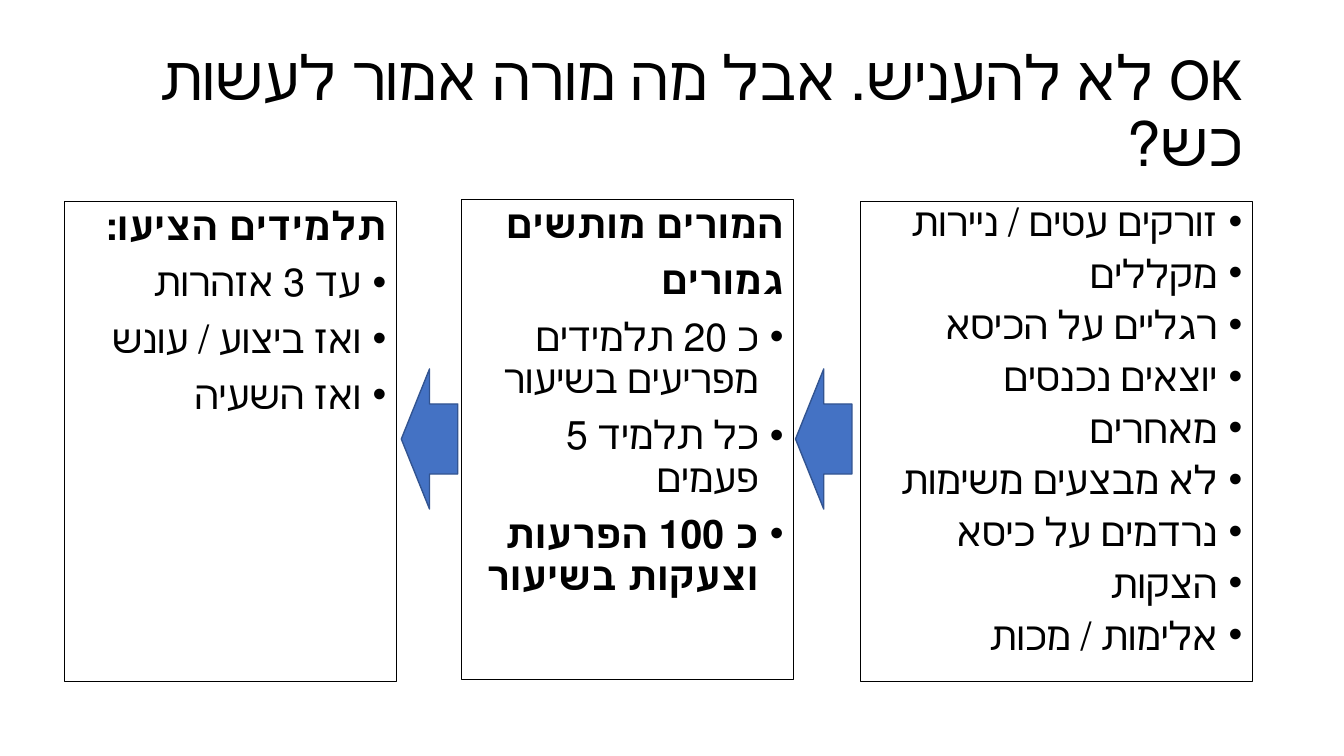
from lxml import etree
from pptx import Presentation
from pptx.dml.color import RGBColor
from pptx.enum.shapes import MSO_SHAPE
from pptx.enum.text import MSO_ANCHOR, PP_ALIGN
from pptx.oxml.ns import qn
from pptx.util import Inches, Pt

BLACK = RGBColor(0x00, 0x00, 0x00)
BLUE = RGBColor(0x44, 0x72, 0xC4)
DARK_BLUE = RGBColor(0x32, 0x54, 0x91)
FONT = "Calibri"
RIGHT = PP_ALIGN.RIGHT
TOP, MIDDLE = MSO_ANCHOR.TOP, MSO_ANCHOR.MIDDLE
RIGHT_ARROW = MSO_SHAPE.RIGHT_ARROW

# Content: each line is (text, bulleted, bold)
TITLE = "OK לא להעניש. אבל מה מורה אמור לעשות כש?"
DISRUPTIONS = [(text, True, False) for text in (
    "זורקים עטים / ניירות", "מקללים", "רגליים על הכיסא",
    "יוצאים נכנסים", "מאחרים", "לא מבצעים משימות",
    "נרדמים על כיסא", "הצקות", "אלימות / מכות",
)]
TEACHERS = [
    ("המורים מותשים", False, True),
    ("גמורים", False, True),
    ("כ 20 תלמידים מפריעים בשיעור", True, False),
    ("כל תלמיד 5 פעמים", True, False),
    ("כ 100 הפרעות וצעקות בשיעור", True, True),
]
STUDENTS = [
    ("תלמידים הציעו:", False, True),
    ("עד 3 אזהרות", True, False),
    ("ואז ביצוע / עונש", True, False),
    ("ואז השעיה", True, False),
]

# Columns: left, top, width, line spacing, lines
COLUMNS = [
    (8.53, 2, 3.89, 0.8, DISRUPTIONS),
    (0.64, 2, 3.29, 0.9, STUDENTS),
    (4.58, 1.98, 3.29, 0.9, TEACHERS),
]
COLUMN_HEIGHT = 4.76
ARROW_LEFTS = [7.89, 3.98]
ARROW_TOP, ARROW_WIDTH, ARROW_HEIGHT = 3.66, 0.56, 1.39

deck = Presentation()
deck.slide_width, deck.slide_height = Inches(13.33), Inches(7.5)
page = deck.slides.add_slide(deck.slide_layouts[6])


def add_box(left, top, width, height, anchor):
    box = page.shapes.add_textbox(
        Inches(left), Inches(top), Inches(width), Inches(height))
    box.text_frame.word_wrap = True
    box.text_frame.vertical_anchor = anchor
    return box


def format_paragraph(para, size, spacing, bold=False):
    """Set a right-to-left paragraph and the font of its runs."""
    para.alignment = RIGHT
    para.line_spacing = spacing
    para._p.get_or_add_pPr().set("rtl", "1")
    for span in para.runs:
        span.font.name = FONT
        span.font.size = Pt(size)
        span.font.bold = bold
        span.font.color.rgb = BLACK


def add_bullet(para):
    properties = para._p.get_or_add_pPr()
    properties.set("marL", str(Inches(0.25)))
    properties.set("indent", str(Inches(-0.25)))
    etree.SubElement(properties, qn("a:buFont")).set("typeface", "Arial")
    etree.SubElement(properties, qn("a:buChar")).set("char", "•")


# Title
title_box = add_box(0.92, 0.4, 11.5, 1.45, MIDDLE)
title_box.text_frame.text = TITLE
format_paragraph(title_box.text_frame.paragraphs[0], 44, 0.9)

# Framed columns
for left, top, width, spacing, lines in COLUMNS:
    column = add_box(left, top, width, COLUMN_HEIGHT, TOP)
    column.line.color.rgb = BLACK
    column.line.width = Pt(0.75)
    frame = column.text_frame
    frame.text = "\n".join(text for text, _, _ in lines)
    for para, (_, bulleted, bold) in zip(frame.paragraphs, lines):
        format_paragraph(para, 28, spacing, bold)
        para.space_before = Pt(10)
        if bulleted:
            add_bullet(para)

# Arrows pointing left between the columns
for left in ARROW_LEFTS:
    arrow = page.shapes.add_shape(
        RIGHT_ARROW, Inches(left), Inches(ARROW_TOP),
        Inches(ARROW_WIDTH), Inches(ARROW_HEIGHT))
    arrow.rotation = 180
    arrow.shadow.inherit = False
    arrow.fill.solid()
    arrow.fill.fore_color.rgb = BLUE
    arrow.line.color.rgb = DARK_BLUE
    arrow.line.width = Pt(1)

deck.save("out.pptx")
